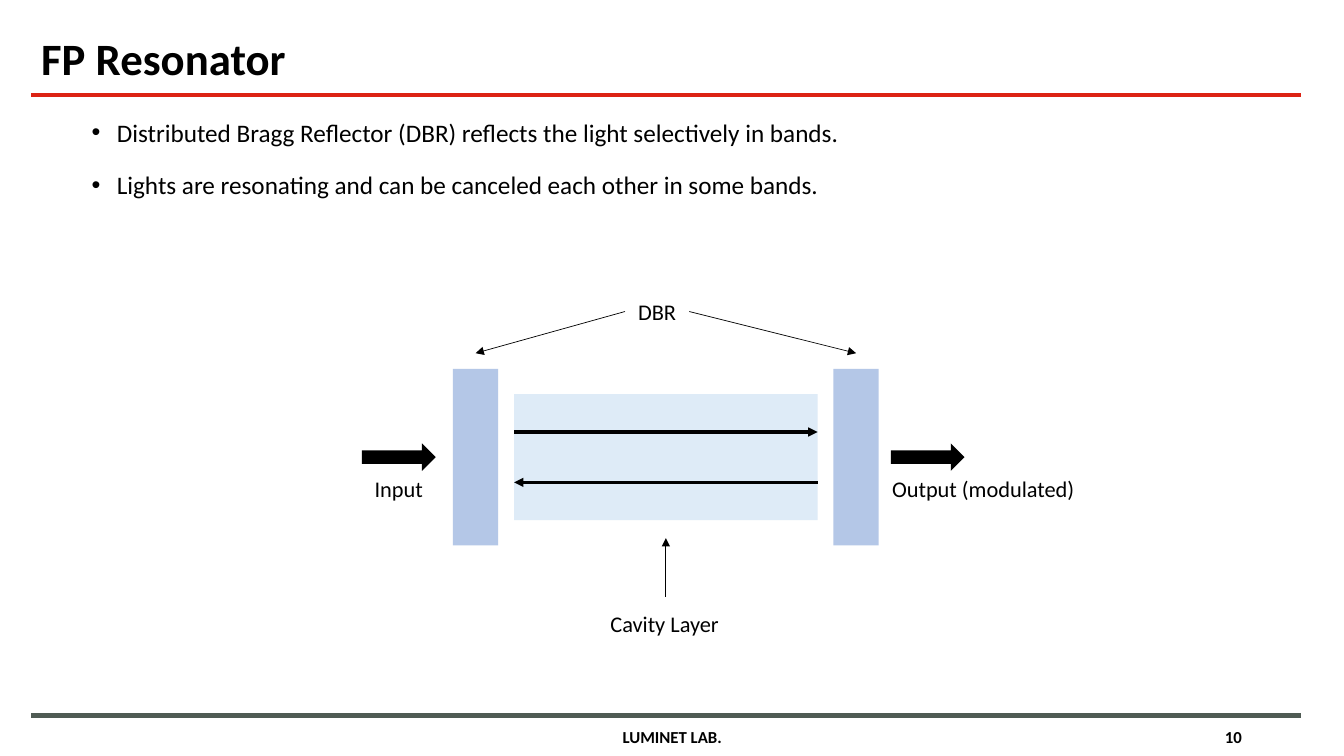
from pptx import Presentation
from pptx.util import Cm, Pt
from pptx.dml.color import RGBColor as Rgb
from pptx.enum.shapes import MSO_CONNECTOR as Link, MSO_SHAPE as Kind
from pptx.enum.text import MSO_ANCHOR as Anchor, PP_ALIGN as Align
from pptx.oxml.ns import qn
from lxml.etree import SubElement as Sub

# Content: lengths in cm, sizes in points
COLORS = {"ink": "000000", "red": "DC2314", "gray": "4F5B54",
          "mirror": "B4C7E7", "cavity": "DEEBF7"}
FONT = "Calibri"
TITLE = "FP Resonator"
POINTS = ["Distributed Bragg Reflector (DBR) reflects the light selectively in bands.",
          "Lights are resonating and can be canceled each other in some bands."]
FOOTER = [("LUMINET LAB.", 11.23, 11.43, Align.CENTER),
          ("10", 23.93, 7.62, Align.RIGHT)]
RULES = [(2.39, "red"), (18.03, "gray")]
LABELS = [("DBR", 16.56, 7.39, 1.63), ("Input", 10.05, 11.86, 2.41),
          ("Output (modulated)", 24.78, 11.86, 5.16),
          ("Cavity Layer", 16.75, 15.24, 3.28)]
LEFT, WIDE = 0.79, 32.0

# Resonator geometry, centred on (MID_X, MID_Y)
MID_X, MID_Y = 16.78, 11.52
CAVITY = (7.65, 3.18)
MIRROR = (1.14, 4.45)
GAP = 0.4
ARROW = (1.86, 0.69)
ARROWS = [10.05, 23.38]
ARROW_Y = 11.52
BEAM = 0.635

deck = Presentation()
deck.slide_width, deck.slide_height = Cm(33.87), Cm(19.05)
slide = deck.slides.add_slide(deck.slide_layouts[6])
shapes = slide.shapes


def color(name):
    return Rgb.from_string(COLORS[name])


def add_run(para, text, size, bold=False):
    run = para.add_run()
    run.text = text
    font = run.font
    font.name, font.size, font.bold = FONT, Pt(size), bold
    font.color.rgb = color("ink")


def add_box(x, y, w, h, wrap=True, anchor=Anchor.TOP):
    frame = shapes.add_textbox(Cm(x), Cm(y), Cm(w), Cm(h)).text_frame
    frame.word_wrap, frame.vertical_anchor = wrap, anchor
    return frame


def add_block(kind, x, y, size, fill):
    """Draw a filled shape centred on (x, y)."""
    w, h = size
    block = shapes.add_shape(kind, Cm(x - w / 2), Cm(y - h / 2), Cm(w), Cm(h))
    block.shadow.inherit = False
    block.fill.solid()
    block.fill.fore_color.rgb = color(fill)
    block.line.fill.background()


def add_line(start, end, width, name="ink", head=True):
    line = shapes.add_connector(Link.STRAIGHT, *map(Cm, start + end))
    line.line.width = Pt(width)
    line.line.color.rgb = color(name)
    if head:
        Sub(line.line._get_or_add_ln(), qn("a:tailEnd"), type="triangle")
    Sub(line._element.spPr, qn("a:effectLst"))


# Rules, title and footer
for y, name in RULES:
    add_line((LEFT, y), (LEFT + WIDE, y), 3, name, head=False)
para = add_box(LEFT, 0.79, WIDE, 1.5, anchor=Anchor.MIDDLE).paragraphs[0]
para.line_spacing = 0.9
add_run(para, TITLE, 32, True)
for text, x, w, align in FOOTER:
    para = add_box(x, 18.16, w, 0.79, anchor=Anchor.MIDDLE).paragraphs[0]
    para.alignment = align
    add_run(para, text, 12, True)

# Bullets
frame = add_box(LEFT, 2.44, WIDE, 15.49)
for i, text in enumerate(POINTS):
    para = frame.add_paragraph() if i else frame.paragraphs[0]
    para.line_spacing, para.space_before = 1.5, Pt(5)
    props = para._p.get_or_add_pPr()
    props.set("marL", str(Cm(1.905)))
    props.set("indent", str(Cm(-0.635)))
    Sub(props, qn("a:buFont"), typeface="Arial")
    Sub(props, qn("a:buChar"), char="•")
    add_run(para, text, 18)

# Mirrors, cavity and light arrows
half = CAVITY[0] / 2
reach = half + GAP + MIRROR[0] / 2
for side in (-1, 1):
    add_block(Kind.RECTANGLE, MID_X + side * reach, MID_Y, MIRROR, "mirror")
add_block(Kind.RECTANGLE, MID_X, MID_Y, CAVITY, "cavity")
for x in ARROWS:
    add_block(Kind.RIGHT_ARROW, x, ARROW_Y, ARROW, "ink")

# Beams in the cavity, then leaders to the mirrors
for side, start in ((-1, 15.75), (1, 17.37)):
    y = MID_Y + side * BEAM
    add_line((MID_X + side * half, y), (MID_X - side * half, y), 2.25) if side > 0 else \
        add_line((MID_X - half, y), (MID_X + half, y), 2.25)
    add_line((start, 7.85), (MID_X + side * reach, 8.9), 0.5)
add_line((MID_X, 15.04), (MID_X, 13.56), 0.5)

# Labels
for text, x, y, w in LABELS:
    para = add_box(x - w / 2, y, w, 0.94, wrap=False).paragraphs[0]
    para.alignment = Align.CENTER
    add_run(para, text, 16)

deck.save("out.pptx")
